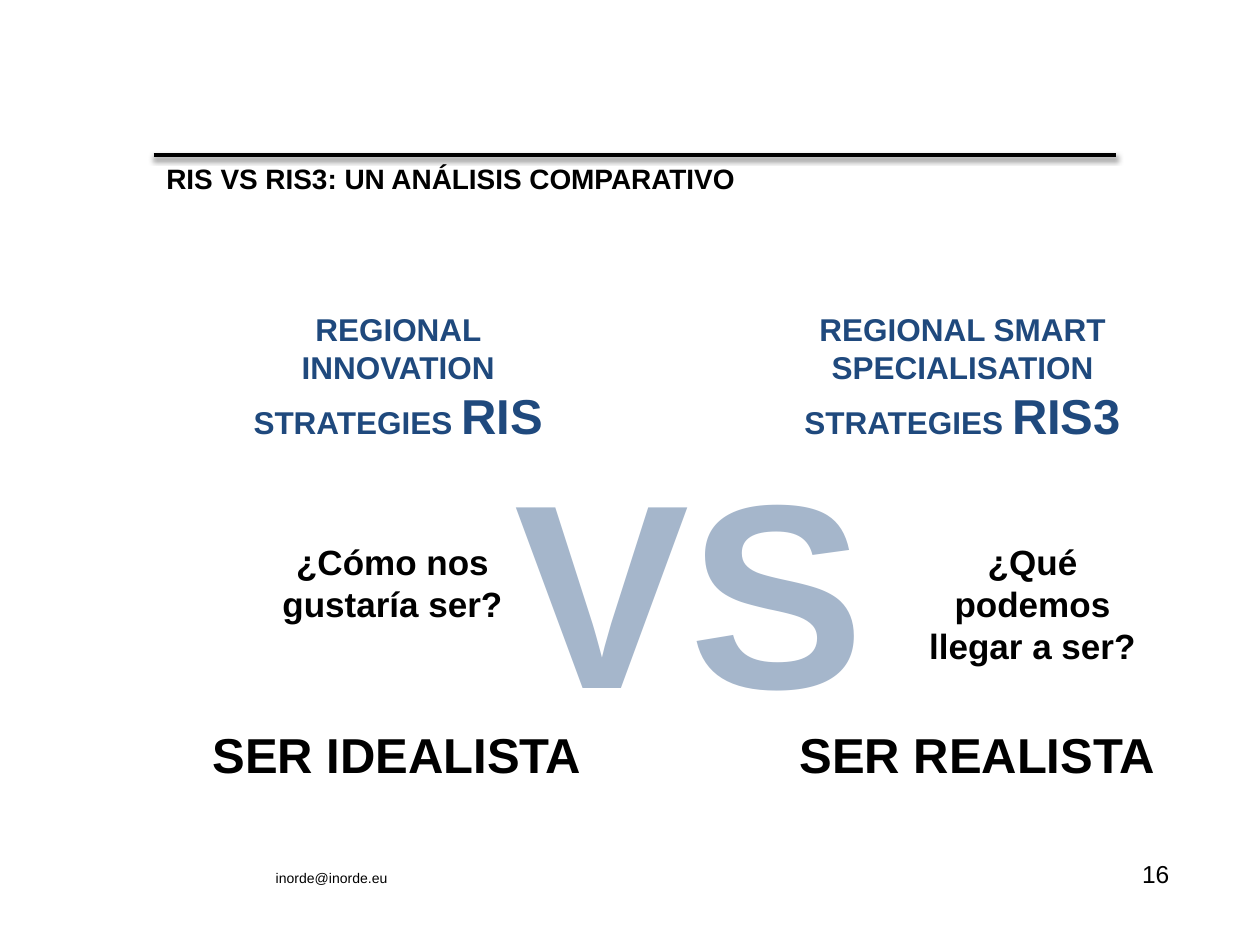
from lxml import etree
from pptx import Presentation
from pptx.dml.color import RGBColor
from pptx.enum.shapes import MSO_CONNECTOR as CONN, MSO_SHAPE as SHAPE
from pptx.enum.text import MSO_ANCHOR as ANCHOR, MSO_AUTO_SIZE as FIT, PP_ALIGN as AL
from pptx.oxml.ns import qn
from pptx.util import Inches, Pt

BLACK, NAVY, WHITE = "000000", "1F497D", "FFFFFF"

prs = Presentation()
prs.slide_width, prs.slide_height = Inches(10), Inches(7.5)
COL, ROW = prs.slide_width / 100, prs.slide_height / 100
s = prs.slides.add_slide(prs.slide_layouts[5])


def rgb(color):
    return RGBColor.from_string(color)


def put_text(text, x, y, w, h, size=28, color=BLACK, bold=True, align=AL.CENTER,
             sp=None, tail="", tail_size=28):
    sp = sp or s.shapes.add_textbox(0, 0, 0, 0)
    sp.left, sp.top, sp.width, sp.height = int(x * COL), int(y * ROW), int(w * COL), int(h * ROW)
    tf = sp.text_frame
    tf.word_wrap, tf.auto_size, tf.vertical_anchor = True, FIT.NONE, ANCHOR.TOP
    p = tf.paragraphs[0]
    p.alignment = align
    for part, pt in ((text, size), (tail, tail_size)):
        if part:
            r = p.add_run()
            r.text = part
            r.font.name, r.font.size, r.font.bold = "Arial", Pt(pt), bold
            r.font.color.rgb = rgb(color)


put_text("RIS VS RIS3: UN ANÁLISIS COMPARATIVO", 12.2, 16.4, 77.2, 7.33,
         size=16, align=AL.LEFT, sp=s.shapes.title)

rule = s.shapes.add_connector(CONN.STRAIGHT, int(12.2 * COL), int(16.4 * ROW),
                              int(88.6 * COL), int(16.4 * ROW))
rule.line.color.rgb, rule.line.width = rgb(BLACK), Pt(2.25)
effects = etree.SubElement(rule._element.spPr, qn("a:effectLst"))
shadow = etree.SubElement(effects, qn("a:outerShdw"), blurRad=str(Pt(3.1)), dist=str(Pt(1.6)),
                          dir="5400000", rotWithShape="0")
tint = etree.SubElement(shadow, qn("a:srgbClr"), val=BLACK)
etree.SubElement(tint, qn("a:alpha"), val="38000")

put_text("VS", 39.8, 44.4, 29.9, 35.07, size=150, color=NAVY)
veil = s.shapes.add_shape(SHAPE.RECTANGLE, int(38.2 * COL), int(48.93 * ROW),
                          int(33.9 * COL), int(27.33 * ROW))
veil.shadow.inherit = False
veil.fill.solid()
veil.fill.fore_color.rgb = rgb(WHITE)
veil.line.fill.background()
tint = veil._element.spPr.find(qn("a:solidFill"))[0]
etree.SubElement(tint, qn("a:alpha"), val="60000")

sides = [
    (("REGIONAL INNOVATION STRATEGIES ", "RIS", 18.5, 26.2),
     ("¿Cómo nos gustaría ser?", 20.9, 20.5, 10.27),
     ("SER IDEALISTA", 11.4, 40.2)),
    (("REGIONAL SMART SPECIALISATION STRATEGIES ", "RIS3", 57.9, 37),
     ("¿Qué podemos llegar a ser?", 71.3, 21.3, 14.8),
     ("SER REALISTA", 57.1, 40.9)),
]
for (name, acronym, nx, nw), (question, qx, qw, qh), (stance, sx, sw) in sides:
    put_text(name, nx, 32.13, nw, 15.73, size=18, color=NAVY, tail=acronym)
    put_text(question, qx, 56.53, qw, qh, size=20)
    put_text(stance, sx, 76, sw, 7.6)

put_text("inorde@inorde.eu", 20.9, 91.33, 31.7, 6.93, size=8, bold=False, align=AL.LEFT)
put_text("16", 70.5, 90.27, 23.3, 6.93, size=14, bold=False, align=AL.RIGHT)

prs.save("out.pptx")
